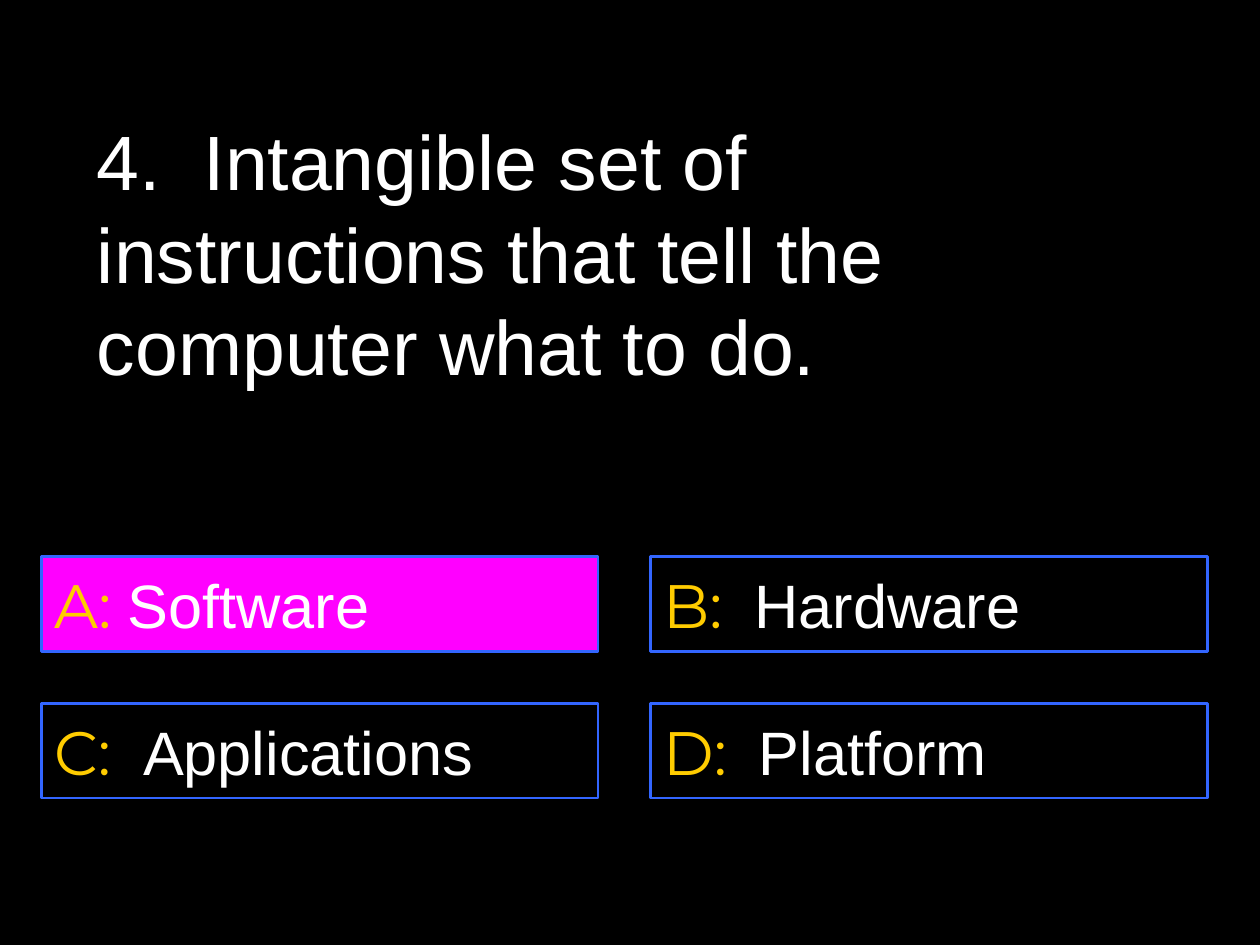
"""Build a quiz slide with one question and four answer boxes."""
from dataclasses import dataclass

from lxml.etree import SubElement
from pptx import Presentation
from pptx.dml.color import RGBColor
from pptx.enum.shapes import MSO_SHAPE
from pptx.enum.text import MSO_ANCHOR, MSO_AUTO_SIZE, PP_ALIGN
from pptx.oxml.ns import qn
from pptx.slide import Slide
from pptx.util import Cm, Pt

COLOURS = {
    "background": "000000",
    "text": "FFFFFF",
    "letter": "FFCC00",
    "border": "3366FF",
    "correct": "FF00FF",
}
BOX_LEFT, BOX_TOP = 0.84, 11.22
BOX_WIDTH, BOX_HEIGHT = 11.22, 1.91
COLUMN_STEP, ROW_STEP = 12.28, 2.96


@dataclass
class Answer:
    label: str
    text: str
    correct: bool = False


ANSWERS = [
    Answer("A: ", "Software", correct=True),
    Answer("B:  ", "Hardware"),
    Answer("C:  ", "Applications"),
    Answer("D:  ", "Platform"),
]


def colour(name: str) -> RGBColor:
    """Return the named colour."""
    return RGBColor.from_string(COLOURS[name])


def add_question(slide: Slide, text: str) -> None:
    """Place the question in the title placeholder."""
    title = slide.shapes.title
    title.left, title.top = Cm(1.7), Cm(1.7)
    title.width, title.height = Cm(21.59), Cm(6.78)
    frame = title.text_frame
    frame.text = text
    frame.word_wrap = True
    frame.auto_size = MSO_AUTO_SIZE.NONE
    frame.vertical_anchor = MSO_ANCHOR.MIDDLE
    paragraph = frame.paragraphs[0]
    paragraph.alignment = PP_ALIGN.LEFT
    paragraph.font.name = "Arial"
    paragraph.font.size = Pt(44)
    paragraph.font.color.rgb = colour("text")


def add_answer(slide: Slide, answer: Answer, row: int, column: int) -> None:
    """Draw one answer box in its grid cell."""
    shape = slide.shapes.add_shape(
        MSO_SHAPE.RECTANGLE,
        Cm(BOX_LEFT + column * COLUMN_STEP),
        Cm(BOX_TOP + row * ROW_STEP),
        Cm(BOX_WIDTH),
        Cm(BOX_HEIGHT),
    )
    shape.shadow.inherit = False
    shape.fill.solid()
    shape.fill.fore_color.rgb = colour("correct" if answer.correct else "background")
    if not answer.correct:
        fill_colour = shape.fill._xPr.find(qn("a:solidFill"))[0]
        SubElement(fill_colour, qn("a:alpha"), val="50000")
    shape.line.color.rgb = colour("border")
    shape.line.width = Pt(1.5)

    frame = shape.text_frame
    frame.word_wrap = False
    frame.vertical_anchor = MSO_ANCHOR.MIDDLE
    paragraph = frame.paragraphs[0]
    paragraph.alignment = PP_ALIGN.LEFT
    paragraph.font.size = Pt(35)
    for text, font_name, colour_name in (
        (answer.label, "Montserrat", "letter"),
        (answer.text, "Arial", "text"),
    ):
        run = paragraph.add_run()
        run.text = text
        run.font.name = font_name
        run.font.color.rgb = colour(colour_name)


def main() -> None:
    """Build and save the presentation."""
    presentation = Presentation()
    presentation.slide_width, presentation.slide_height = Cm(25.4), Cm(19.05)
    slide = presentation.slides.add_slide(presentation.slide_layouts[5])
    slide.background.fill.solid()
    slide.background.fill.fore_color.rgb = colour("background")
    add_question(
        slide,
        "4.  Intangible set of instructions that tell the computer what to do.",
    )
    for index, answer in enumerate(ANSWERS):
        add_answer(slide, answer, *divmod(index, 2))
    presentation.save("out.pptx")


if __name__ == "__main__":
    main()
